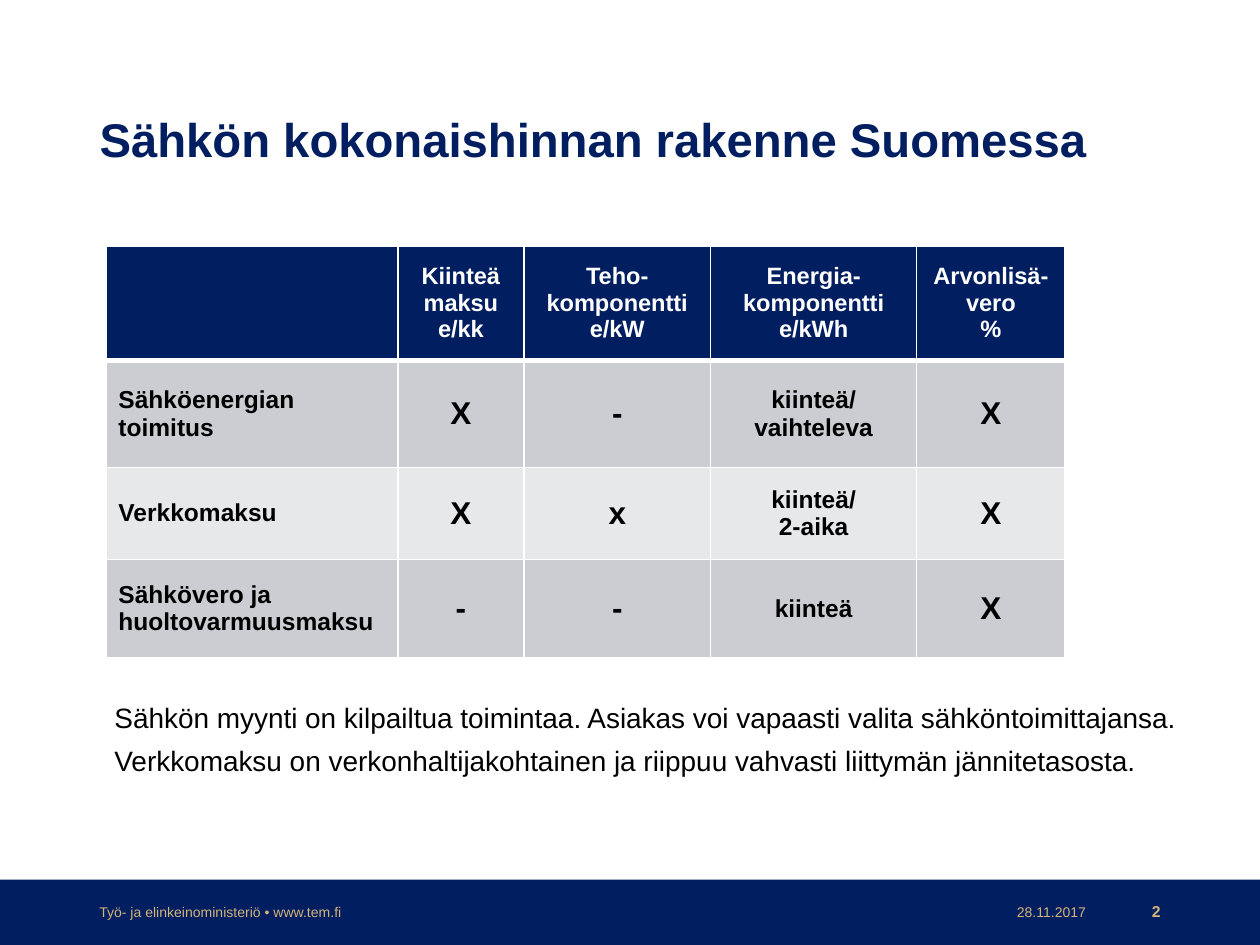
from lxml import etree
from pptx import Presentation
from pptx import util as u
from pptx.dml.color import RGBColor
from pptx.enum import shapes, text
from pptx.oxml.ns import qn

THEME = {
    "font": "Arial",
    "navy": "001E60", "gold": "D5B37A", "white": "FFFFFF", "black": "000000",
    "bands": ["CCCDD2", "E7E8EA"],
    "title": 27, "body": 16, "header": 13.5, "label": 14, "mark": 18,
    "footer": 8, "number": 9,
}

TITLE = "Sähkön kokonaishinnan rakenne Suomessa"
HEADER = ["", "Kiinteä maksu\ne/kk", "Teho-komponentti\ne/kW",
          "Energia-komponentti\ne/kWh", "Arvonlisä-vero\n%"]
ROWS = [
    ["Sähköenergian toimitus", "X", "-", "kiinteä/\nvaihteleva", "X"],
    ["Verkkomaksu", "X", "x", "kiinteä/\n2-aika", "X"],
    ["Sähkövero ja huoltovarmuusmaksu", "-", "-", "kiinteä", "X"],
]
NOTES = ("Sähkön myynti on kilpailtua toimintaa. Asiakas voi vapaasti valita sähköntoimittajansa.\n"
         "Verkkomaksu on verkonhaltijakohtainen ja riippuu vahvasti liittymän jännitetasosta.")
LEFT, RIGHT = text.PP_ALIGN.LEFT, text.PP_ALIGN.RIGHT
CENTER = text.PP_ALIGN.CENTER
FOOTER = [
    ("Työ- ja elinkeinoministeriö •\u00a0www.tem.fi", 49.7, 242.6, LEFT, "footer", False),
    ("28.11.2017", 572.4, 55.4, RIGHT, "footer", False),
    ("2", 627.8, 42.5, RIGHT, "number", True),
]

SLIDE = (720, 540)
BAND_TOP = 502.6
FOOTER_TOP, FOOTER_HEIGHT = 512.6, 16.6
TABLE_LEFT, TABLE_TOP = 60.5, 140.6
COLUMNS = [166.9, 72, 106.7, 117.8, 84.8]
HEIGHTS = [65.3, 61.2, 52.6, 56.2]


def color(name):
    return RGBColor.from_string(THEME.get(name, name))


def write(frame, content, size, ink="black", bold=False, align=LEFT, spacing=None, before=0):
    frame.word_wrap = True
    for index, line in enumerate(content.split("\n")):
        para = frame.paragraphs[0] if index == 0 else frame.add_paragraph()
        para.alignment = align
        para.space_before = u.Pt(before if index else 0)
        if spacing:
            para.line_spacing = spacing
        span = para.add_run()
        span.text = line
        span.font.name = THEME["font"]
        span.font.size = u.Pt(THEME[size])
        span.font.bold = bold
        span.font.color.rgb = color(ink)


def place(shape, left, top, width, height):
    shape.left, shape.top = u.Pt(left), u.Pt(top)
    shape.width, shape.height = u.Pt(width), u.Pt(height)


def add_text(page, area, content, size, anchor=text.MSO_ANCHOR.TOP, **style):
    box = page.shapes.add_textbox(*map(u.Pt, area))
    box.text_frame.vertical_anchor = anchor
    write(box.text_frame, content, size, **style)


def add_border(cell, side, width):
    line = etree.SubElement(cell._tc.get_or_add_tcPr(), qn(f"a:ln{side}"), w=str(u.Pt(width)))
    fill = etree.SubElement(line, qn("a:solidFill"))
    etree.SubElement(fill, qn("a:srgbClr"), val=THEME["white"])


def add_price_table(page):
    grid = [HEADER] + ROWS
    area = (TABLE_LEFT, TABLE_TOP, sum(COLUMNS), sum(HEIGHTS))
    table = page.shapes.add_table(len(grid), len(HEADER), *map(u.Pt, area)).table
    table.horz_banding = False
    for column, width in zip(table.columns, COLUMNS):
        column.width = u.Pt(width)
    for row, height in zip(table.rows, HEIGHTS):
        row.height = u.Pt(height)
    for r, line in enumerate(grid):
        for c, content in enumerate(line):
            cell = table.cell(r, c)
            cell.vertical_anchor = text.MSO_ANCHOR.MIDDLE
            widths = {"L": 1, "R": 1, "T": 3 if r == 1 else 1, "B": 3 if r == 0 else 1}
            for side, width in widths.items():
                add_border(cell, side, width)
            cell.fill.solid()
            cell.fill.fore_color.rgb = color(THEME["bands"][(r - 1) % 2] if r else "navy")
            size = "header" if r == 0 else "mark" if len(content) == 1 else "label"
            if content:
                write(cell.text_frame, content, size, ink="black" if r else "white",
                      bold=True, align=CENTER if c or r == 0 else LEFT)


def main():
    deck = Presentation()
    deck.slide_width, deck.slide_height = map(u.Pt, SLIDE)
    page = deck.slides.add_slide(deck.slide_layouts[5])

    band_area = (0, BAND_TOP, SLIDE[0], SLIDE[1] - BAND_TOP)
    band = page.shapes.add_shape(shapes.MSO_SHAPE.RECTANGLE, *map(u.Pt, band_area))
    band.shadow.inherit = False
    band.fill.solid()
    band.fill.fore_color.rgb = color("navy")
    band.line.fill.background()

    title = page.shapes.title
    place(title, 49.7, 41.8, 591.8, 78.5)
    title.text_frame.auto_size = text.MSO_AUTO_SIZE.NONE
    title.text_frame.vertical_anchor = text.MSO_ANCHOR.MIDDLE
    write(title.text_frame, TITLE, "title", ink="navy", bold=True, spacing=0.9)

    add_text(page, (58.3, 398.9, 651.6, 103), NOTES, "body", spacing=0.9, before=7.5)
    for content, left, width, align, size, bold in FOOTER:
        add_text(page, (left, FOOTER_TOP, width, FOOTER_HEIGHT), content, size,
                 anchor=text.MSO_ANCHOR.MIDDLE, ink="gold", bold=bold, align=align)
    add_price_table(page)
    deck.save("out.pptx")


if __name__ == "__main__":
    main()
